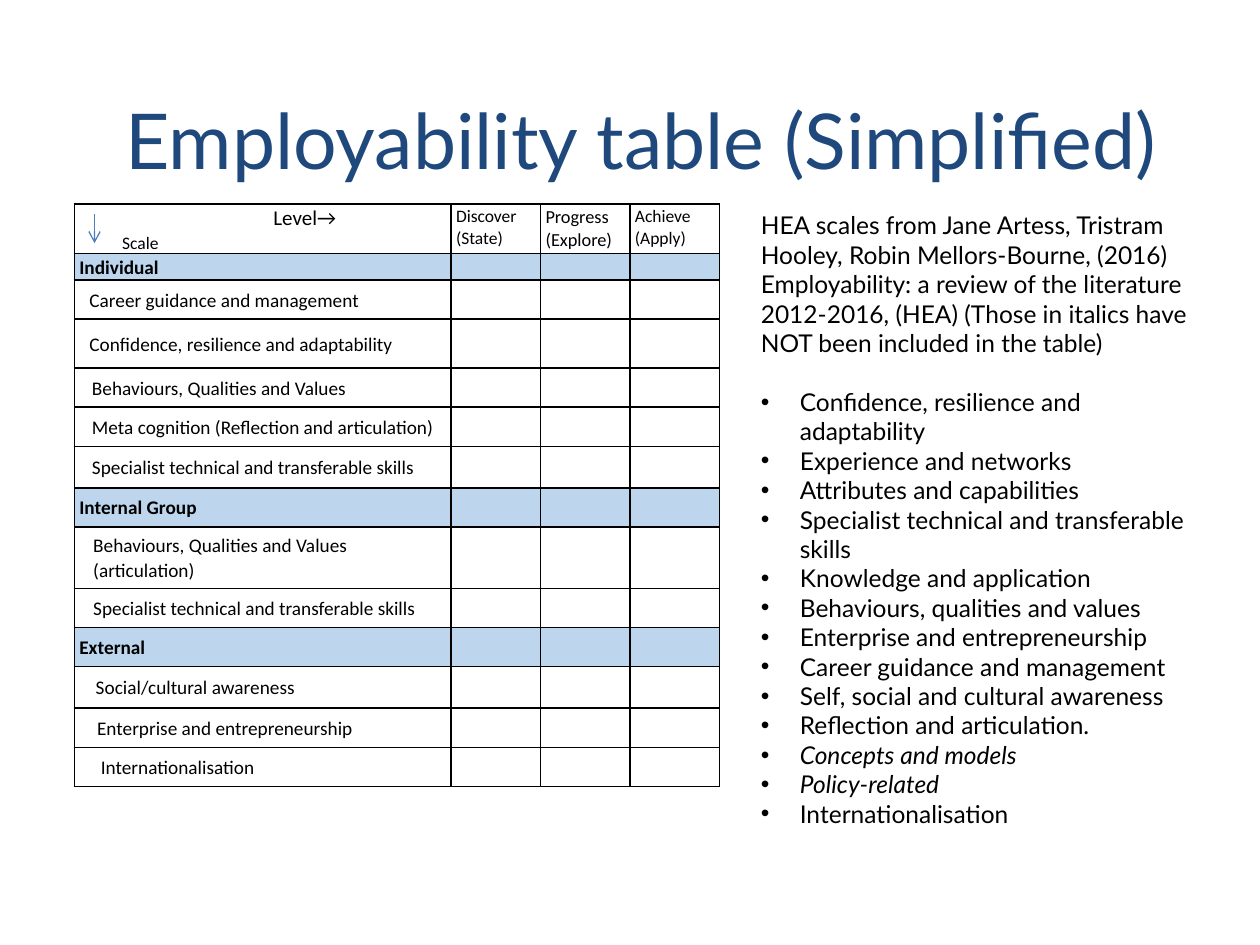
from lxml.etree import SubElement
from pptx import Presentation
from pptx.dml.color import RGBColor
from pptx.enum.shapes import MSO_CONNECTOR
from pptx.enum.text import MSO_ANCHOR, PP_ALIGN
from pptx.oxml.ns import qn
from pptx.util import Inches, Pt

COLORS = {"title": "1F497D", "text": "000000", "band": "BDD6EE", "arrow": "4B7EBC"}

# Table rows: height, label, indent; a row without indent is a section band
ROWS = [
    (0.21, "Individual", None),
    (0.31, "Career guidance and management", 0.08),
    (0.39, "Confidence, resilience and adaptability", 0.08),
    (0.31, "Behaviours, Qualities and Values", 0.1),
    (0.31, "Meta cognition (Reflection and articulation)", 0.1),
    (0.33, "Specialist technical and transferable skills", 0.1),
    (0.31, "Internal Group", None),
    (0.49, "Behaviours, Qualities and Values\n(articulation)", 0.11),
    (0.31, "Specialist technical and transferable skills", 0.11),
    (0.31, "External", None),
    (0.33, "Social/cultural awareness", 0.13),
    (0.31, "Enterprise and entrepreneurship", 0.14),
    (0.31, "Internationalisation", 0.17),
]
HEADER_HEIGHT = 0.39
COLUMN_WIDTHS = [2.99, 0.71, 0.71, 0.71]
LEVELS = [("Discover (State)", 10), ("Progress (Explore)", 10.5), ("Achieve (Apply)", 10)]

SOURCE = ("HEA scales from Jane Artess, Tristram Hooley, Robin Mellors-Bourne, (2016) "
          "Employability: a review of the literature 2012-2016, (HEA) "
          "(Those in italics have NOT been included in the table)")
SCALES = [
    "Confidence, resilience and adaptability", "Experience and networks",
    "Attributes and capabilities", "Specialist technical and transferable skills",
    "Knowledge and application", "Behaviours, qualities and values",
    "Enterprise and entrepreneurship", "Career guidance and management",
    "Self, social and cultural awareness", "Reflection and articulation.",
    "Concepts and models", "Policy-related", "Internationalisation",
]
ITALIC_SCALES = {"Concepts and models", "Policy-related"}

LEFT, TOP = 0.59, 1.62


def style(para, size, font="Calibri", color="text", bold=False, italic=False):
    for span in para.runs:
        span.font.name = font
        span.font.size = Pt(size)
        span.font.bold = bold
        span.font.italic = italic
        span.font.color.rgb = RGBColor.from_string(COLORS[color])


def indent(para, left, first=0):
    properties = para._p.get_or_add_pPr()
    properties.set("marL", str(Inches(left)))
    properties.set("indent", str(Inches(first)))
    return properties


deck = Presentation()
deck.slide_width, deck.slide_height = Inches(10), Inches(7.5)
page = deck.slides.add_slide(deck.slide_layouts[6])

# Title
box = page.shapes.add_textbox(Inches(LEFT), Inches(0.68), Inches(9), Inches(0.84))
box.text_frame.word_wrap = True
box.text_frame.vertical_anchor = MSO_ANCHOR.MIDDLE
para = box.text_frame.paragraphs[0]
para.text = "Employability table (Simplified)"
para.alignment = PP_ALIGN.CENTER
style(para, 44, "Lato", "title")

# Table grid
heights = [HEADER_HEIGHT] + [height for height, _, _ in ROWS]
table = page.shapes.add_table(
    len(heights), len(COLUMN_WIDTHS), Inches(LEFT), Inches(TOP),
    Inches(sum(COLUMN_WIDTHS)), Inches(sum(heights))).table
table.first_row = table.horz_banding = False
for column, width in zip(table.columns, COLUMN_WIDTHS):
    column.width = Inches(width)
for row, height in zip(table.rows, heights):
    row.height = Inches(height)

for cell in table.iter_cells():
    cell.margin_left = cell.margin_right = Inches(0.04)
    cell.margin_top = cell.margin_bottom = 0
    cell.fill.background()
    properties = cell._tc.get_or_add_tcPr()
    for position, side in enumerate(("lnL", "lnR", "lnT", "lnB")):
        border = SubElement(properties, qn(f"a:{side}"), w=str(Pt(1)))
        SubElement(SubElement(border, qn("a:solidFill")), qn("a:srgbClr"), val=COLORS["text"])
        properties.insert(position, border)

# Header row
corner = table.cell(0, 0)
corner.text = "Level→\nScale"
for para, left, size in zip(corner.text_frame.paragraphs, (1.54, 0.34), (12, 10)):
    para.line_spacing = 1.07
    indent(para, left)
    style(para, size)
for number, (level, size) in enumerate(LEVELS, start=1):
    cell = table.cell(0, number)
    cell.text = level
    para = cell.text_frame.paragraphs[0]
    para.line_spacing = 1.07
    style(para, size)

# Section bands and their scales
for number, (_, label, left) in enumerate(ROWS, start=1):
    is_band = left is None
    first, *blanks = table.rows[number].cells
    first.text = label
    first.vertical_anchor = MSO_ANCHOR.MIDDLE
    for para in first.text_frame.paragraphs:
        para.line_spacing = 1.07
        indent(para, left or 0)
        style(para, 11, bold=is_band)
    for cell in blanks:
        SubElement(cell.text_frame.paragraphs[0]._p, qn("a:endParaRPr"), sz="1000")
    if is_band:
        for cell in (first, *blanks):
            cell.fill.solid()
            cell.fill.fore_color.rgb = RGBColor.from_string(COLORS["band"])

# Arrow pointing down the scales
arrow = page.shapes.add_connector(
    MSO_CONNECTOR.STRAIGHT, Inches(0.75), Inches(1.7), Inches(0.75), Inches(1.93))
arrow.line.color.rgb = RGBColor.from_string(COLORS["arrow"])
arrow.line.width = Pt(0.75)
SubElement(arrow.line._get_or_add_ln(), qn("a:tailEnd"), type="arrow")
SubElement(arrow._element.spPr, qn("a:effectLst"))

# Source and list of scales
box = page.shapes.add_textbox(Inches(5.94), Inches(TOP), Inches(3.63), Inches(5.05))
frame = box.text_frame
frame.word_wrap = True
frame.text = SOURCE
style(frame.paragraphs[0], 14, "Lato")
frame.paragraphs[0].space_after = Pt(16.8)
for scale in SCALES:
    para = frame.add_paragraph()
    para.text = scale
    properties = indent(para, 0.31, -0.31)
    SubElement(properties, qn("a:buFont"), typeface="Arial")
    SubElement(properties, qn("a:buChar"), char="•")
    style(para, 14, "Lato", italic=scale in ITALIC_SCALES)

deck.save("out.pptx")
